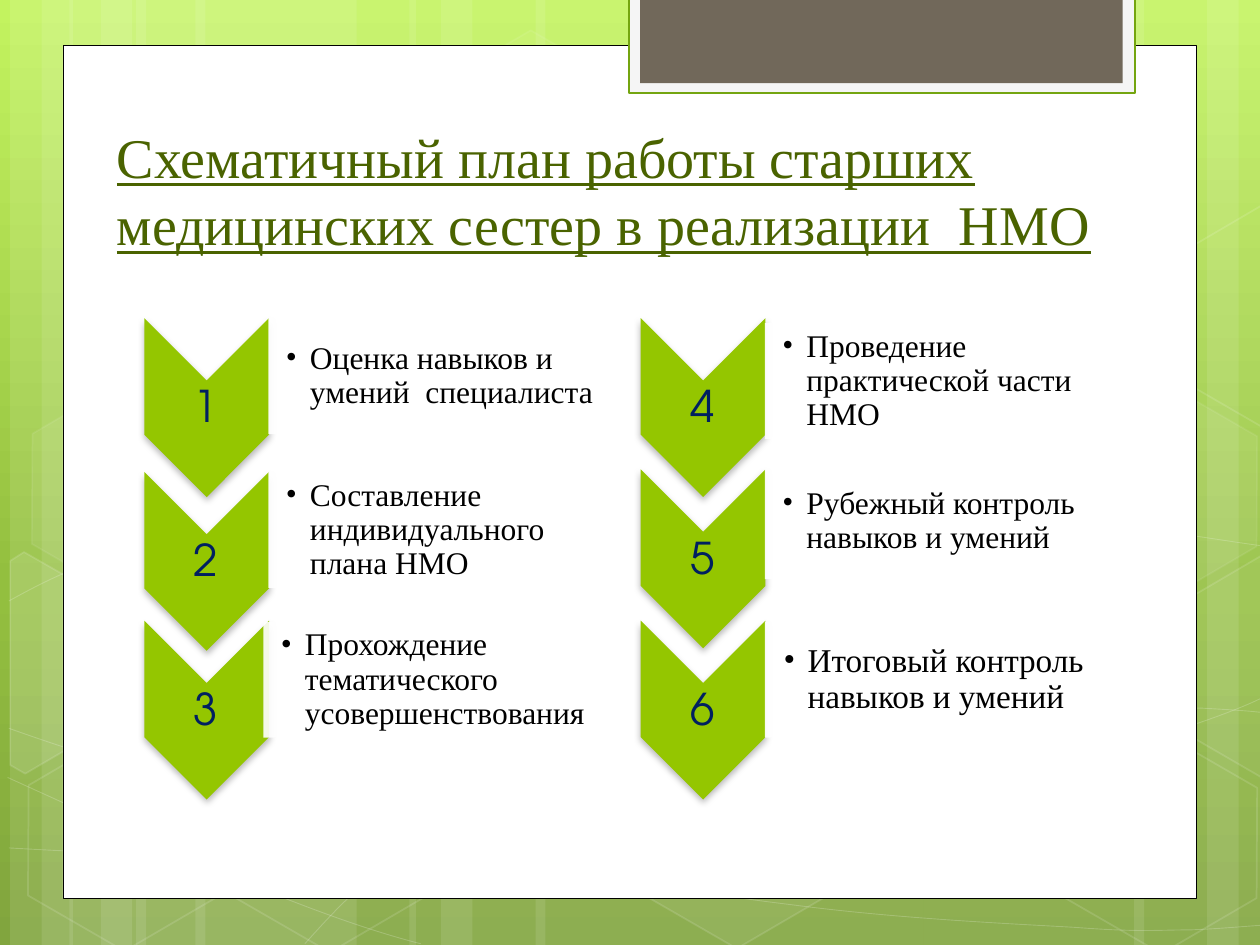
"""Build the slide with the six-step work plan for senior nurses."""
from copy import deepcopy
from dataclasses import dataclass
from math import cos, radians, sin

from lxml.etree import SubElement
from pptx import Presentation
from pptx.dml.color import RGBColor
from pptx.enum.shapes import MSO_SHAPE
from pptx.enum.text import MSO_ANCHOR, PP_ALIGN
from pptx.oxml.ns import qn
from pptx.util import Inches, Pt


@dataclass
class Theme:
    white: str = "FFFFFF"
    black: str = "000000"
    green: str = "94C600"
    title: str = "4A6300"
    navy: str = "002060"
    tab: str = "71685A"
    tab_frame: str = "F5F5F5"
    tab_line: str = "74A510"
    back: tuple = ((0, "C3F35F"), (0.62, "93BF3F"), (1, "81A53E"))
    serif: str = "Times New Roman"
    sans: str = "TeX Gyre Adventor"
    title_size: int = 32
    number_size: int = 25
    label_size: int = 18
    last_size: int = 19


T = Theme()
prs = Presentation()
prs.slide_width, prs.slide_height = Inches(10), Inches(7.5)
COL, ROW = prs.slide_width / 10, prs.slide_height / 7.5
s = prs.slides.add_slide(prs.slide_layouts[6])


def paint(sp, fill=None, alpha=100, line=None, width=1, line_alpha=100, rot=0):
    sp.shadow.inherit = False
    sp.rotation = rot
    for part, color in ((sp.fill, fill), (sp.line.fill, line)):
        if color:
            part.solid()
            part.fore_color.rgb = RGBColor.from_string(color)
        else:
            part.background()
    if line:
        sp.line.width = Pt(width)
    for where, share in (("a:solidFill", alpha), ("a:ln/a:solidFill", line_alpha)):
        clr = sp._element.spPr.find("/".join(qn(tag) for tag in where.split("/")) + "/" + qn("a:srgbClr"))
        if clr is not None and share < 100:
            SubElement(clr, qn("a:alpha"), val=str(share * 1000))
    return sp


def text(words, x, y, w, h, font=T.serif, size=T.label_size, color=T.black, anchor=MSO_ANCHOR.MIDDLE,
         align=PP_ALIGN.LEFT, inset=(0.1, 0.05, 0.1, 0.05), spacing=0.9, underline=False, bullet=None):
    tf = s.shapes.add_textbox(int(x * COL), int(y * ROW), int(w * COL), int(h * ROW)).text_frame
    tf.word_wrap = True
    tf.vertical_anchor = anchor
    tf.margin_left, tf.margin_top, tf.margin_right, tf.margin_bottom = (int(i * COL) for i in inset)
    p = tf.paragraphs[0]
    p.alignment, p.line_spacing = align, spacing
    if bullet:
        pPr = p._p.get_or_add_pPr()
        pPr.set("marL", str(int(0.19 * COL)))
        pPr.set("indent", str(int(-0.19 * COL)))
        SubElement(pPr, qn("a:buFont"), typeface=font)
        SubElement(pPr, qn("a:buChar"), char=bullet)
    r = p.add_run()
    r.text = words
    r.font.name, r.font.size, r.font.underline = font, Pt(size), underline
    r.font.color.rgb = RGBColor.from_string(color)


bg = s.background.fill
bg.gradient()
bg.gradient_angle = 270
stops = s._element.find(".//" + qn("a:gsLst"))
stops.append(deepcopy(stops[-1]))
for stop, (position, color) in zip(bg.gradient_stops, T.back):
    stop.position = position
    stop.color.rgb = RGBColor.from_string(color)

stripes = [(1.08, 1.75, 0), (0.08, 0.5, 0), (0.33, 0.83, 0), (1.55, 1.75, 0), (0.55, 0.5, 0), (0.8, 0.83, 0),
           (7.33, 1.75, 180), (9.58, 0.5, 180), (9, 0.83, 180), (4.25, 3.08, 0), (3.25, 0.5, 0), (3.5, 0.83, 0)]
for x, w, rot in stripes:
    sp = s.shapes.add_shape(MSO_SHAPE.RECTANGLE, int(x * COL), 0, int(w * COL), prs.slide_height)
    paint(sp, T.white, 10, rot=rot)

waves = [
    [(0.07, 6.73), (0.61, 6.76), (1.15, 6.79), (1.9, 6.78), (2.65, 6.77), (3.58, 6.75), (4.58, 6.65),
     (5.58, 6.55), (7, 6.36), (7.92, 6.17), (8.83, 5.98), (9.77, 5.68), (10.07, 5.51)],
    [(0.07, 4.77), (0.36, 4.61), (0.65, 4.46), (1.21, 4.31), (1.78, 4.16), (2.59, 3.94), (3.47, 3.87),
     (4.36, 3.8), (5.44, 3.79), (6.54, 3.87), (7.64, 3.95), (9.47, 4.26), (10.07, 4.34)],
    [(0.06, 6.17), (1.27, 6.72), (2.47, 7.27), (3.34, 7.49)],
    [(0.07, 5.78), (0.38, 5.89), (0.7, 6), (1.28, 6.16), (1.86, 6.31), (2.73, 6.56), (3.57, 6.73),
     (4.4, 6.9), (5.45, 7.08), (6.28, 7.18), (7.11, 7.29), (8, 7.33), (8.53, 7.36),
     (9.05, 7.4), (9.19, 7.38), (9.45, 7.38), (9.71, 7.37), (9.89, 7.35), (10.07, 7.34)],
    [(2.42, 7.49), (2.6, 7.29), (2.78, 7.09), (3.02, 6.91), (3.26, 6.73), (3.6, 6.53), (3.88, 6.39),
     (4.16, 6.25), (4.33, 6.19), (4.7, 6.09), (5.06, 5.99), (5.73, 5.85), (6.08, 5.78),
     (6.44, 5.71), (6.49, 5.71), (6.8, 5.69), (7.11, 5.66), (7.6, 5.63), (7.94, 5.62),
     (8.29, 5.61), (8.86, 5.62), (8.86, 5.62), (9.08, 5.62), (9.31, 5.62), (9.53, 5.62),
     (9.71, 5.63), (9.88, 5.64), (9.97, 5.65), (10.06, 5.66), (10.03, 5.65), (10.06, 5.66)],
]
FINE = 1000
for wave in waves:
    points = [(x * FINE, y * FINE) for x, y in wave]
    fb = s.shapes.build_freeform(*points[0], scale=COL / FINE)
    fb.add_line_segments(points[1:], close=False)
    sp = paint(fb.convert_to_shape(), line=T.white, width=0.5, line_alpha=20)
    outline = sp._element.spPr.find(".//" + qn("a:pathLst"))[0]
    segments = outline.findall(qn("a:lnTo"))
    for i in range(0, len(segments), 3):
        curve = SubElement(outline, qn("a:cubicBezTo"))
        for segment in segments[i:i + 3]:
            curve.append(segment[0])
            outline.remove(segment)

hexagons = [(3.34, 0.36, 4, 8), (4.97, 5.89, 6, 12), (0.11, 5.91, 0, 12), (0.14, 3.12, 7, 8), (1.74, 5.92, 0, 12),
            (7.53, 4.53, 10, 12), (8.34, 5.93, 0, 12), (8.34, 3.14, 7, 8)]
TILT = 30
for x, y, alpha, line_alpha in hexagons:
    sp = s.shapes.add_shape(MSO_SHAPE.HEXAGON, int(x * COL), int(y * ROW), int(1.75 * COL), int(1.52 * ROW))
    sp.adjustments[0] = 0.285
    paint(sp, T.white if alpha else None, alpha, T.white, 1, line_alpha, rot=TILT)

cut_hexagons = [
    (10, 0.36, 5.35, [(0.08, 4.45), (0.19, 4.38), (0.96, 4.82), (0.95, 5.7), (0.2, 6.14), (0.08, 6.07)]),
    (4, 9.85, 5.2, [(9.26, 4.85), (10.01, 4.41), (10.09, 4.46), (10.09, 6.13), (10.02, 6.17), (9.26, 5.73)]),
    (0, 9.85, 2.41, [(9.26, 2.07), (10.01, 1.63), (10.1, 1.68), (10.09, 3.35), (10.02, 3.39), (9.26, 2.95)]),
]
c, d = cos(radians(TILT)), sin(radians(TILT))
for alpha, mid_x, mid_y, corners in cut_hexagons:
    points = [((mid_x + c * (x - mid_x) + d * (y - mid_y)) * FINE,
               (mid_y - d * (x - mid_x) + c * (y - mid_y)) * FINE) for x, y in corners]
    fb = s.shapes.build_freeform(*points[0], scale=COL / FINE)
    fb.add_line_segments(points[1:])
    paint(fb.convert_to_shape(), T.white if alpha else None, alpha, T.white, 1, 12, rot=TILT)

panels = [(0.5, 0.36, 9, 6.77, T.white, T.black, 0.5),
          (4.99, -0.02, 4.02, 0.76, T.tab_frame, T.tab_line, 1.25),
          (5.08, -0.02, 3.83, 0.68, T.tab, None, 0)]
for x, y, w, h, fill, line, width in panels:
    sp = s.shapes.add_shape(MSO_SHAPE.RECTANGLE, int(x * COL), int(y * ROW), int(w * COL), int(h * ROW))
    paint(sp, fill, line=line, width=width)

text("Схематичный план работы старших медицинских сестер в реализации  НМО", 0.83, 0.84, 8.31, 1.25,
     size=T.title_size, color=T.title, anchor=MSO_ANCHOR.BOTTOM, spacing=1, underline=True)

LEFT, PITCH = 1.14, 3.94
CHEVRON_W, CHEVRON_H = 1.42, 0.99
PANEL_W, PANEL_H = 0.92, 2.75
LABEL_W, LABEL_H = 2.7, 0.83
steps = [
    (2.74, 2.13, 2.57, "Оценка навыков и умений  специалиста", T.label_size, 0.14),
    (3.96, 2.13, 3.79, "Составление индивидуального плана НМО", T.label_size, 0.14),
    (5.14, 2.09, 4.98, "Прохождение тематического усовершенствования", T.label_size, 0.14),
    (2.74, 6.07, 2.61, "Проведение практической части НМО", T.label_size, 0.14),
    (3.94, 6.07, 3.72, "Рубежный контроль навыков и умений", T.label_size, 0.14),
    (5.14, 6.07, 4.98, "Итоговый контроль навыков и умений", T.last_size, 0.15),
]
for i, (y, label_x, label_y, words, size, indent) in enumerate(steps):
    x = LEFT + i // 3 * PITCH
    sp = s.shapes.add_shape(MSO_SHAPE.CHEVRON, int((x - 0.21) * COL), int(y * ROW),
                            int(CHEVRON_W * COL), int(CHEVRON_H * ROW))
    paint(sp, T.green, rot=90)
    shadow = SubElement(sp._element.spPr.find(qn("a:effectLst")), qn("a:outerShdw"), blurRad=str(Pt(4)),
                        dist=str(Pt(2)), dir="5400000", rotWithShape="0")
    SubElement(SubElement(shadow, qn("a:srgbClr"), val=T.black), qn("a:alpha"), val="28000")
    text(str(i + 1), x, y + 0.29, CHEVRON_H, 0.43, font=T.sans, size=T.number_size, color=T.navy,
         align=PP_ALIGN.CENTER, inset=(0.02,) * 4)

    sp = s.shapes.add_shape(MSO_SHAPE.ROUND_2_SAME_RECTANGLE, int((label_x + (PANEL_H - PANEL_W) / 2) * COL),
                            int((label_y + (LABEL_H - PANEL_H) / 2) * ROW), int(PANEL_W * COL), int(PANEL_H * ROW))
    paint(sp, T.white, 90, rot=90)
    text(words, label_x, label_y, LABEL_W, LABEL_H, size=size, inset=(indent, 0.01, 0.01, 0.01), bullet="•")

prs.save("out.pptx")
